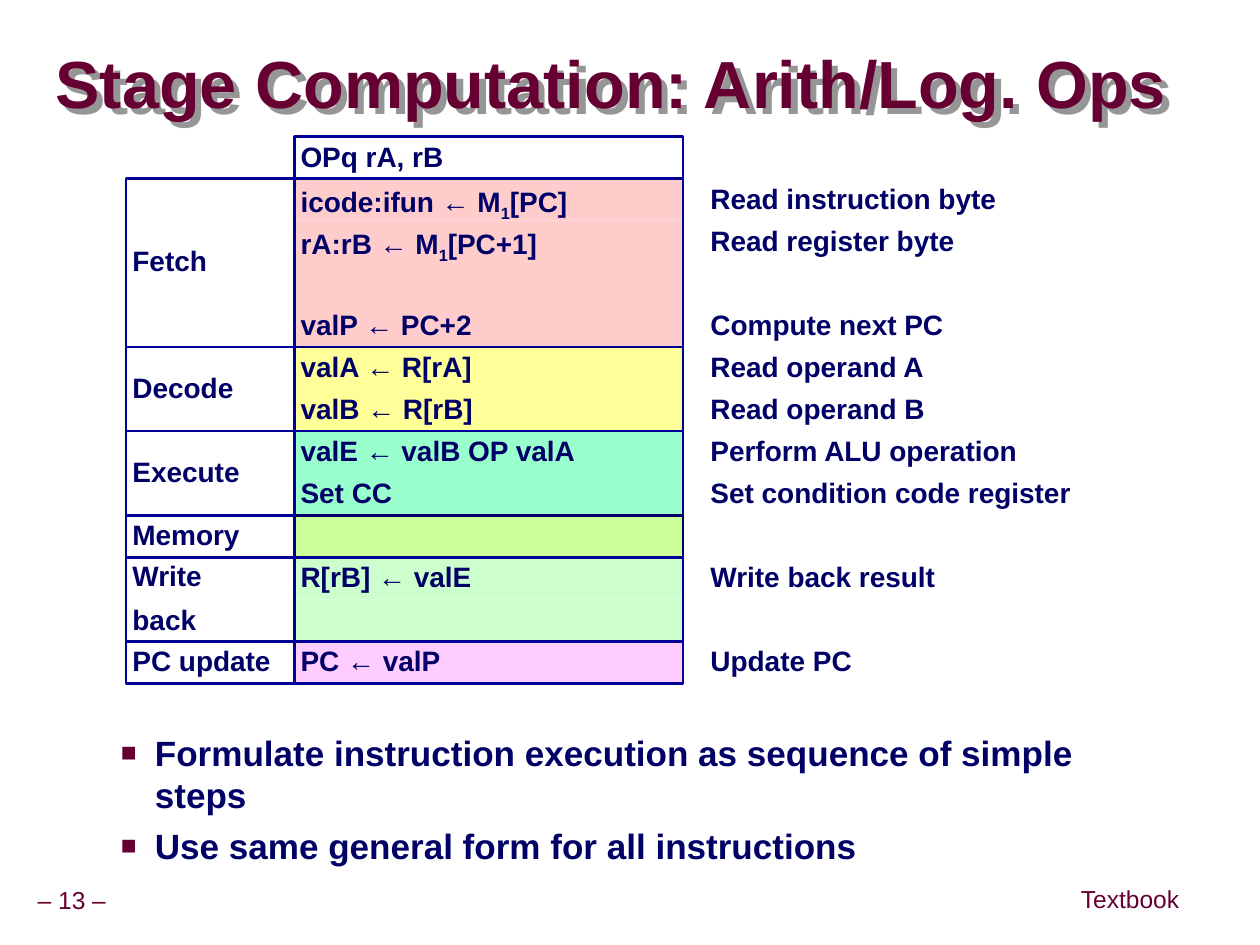
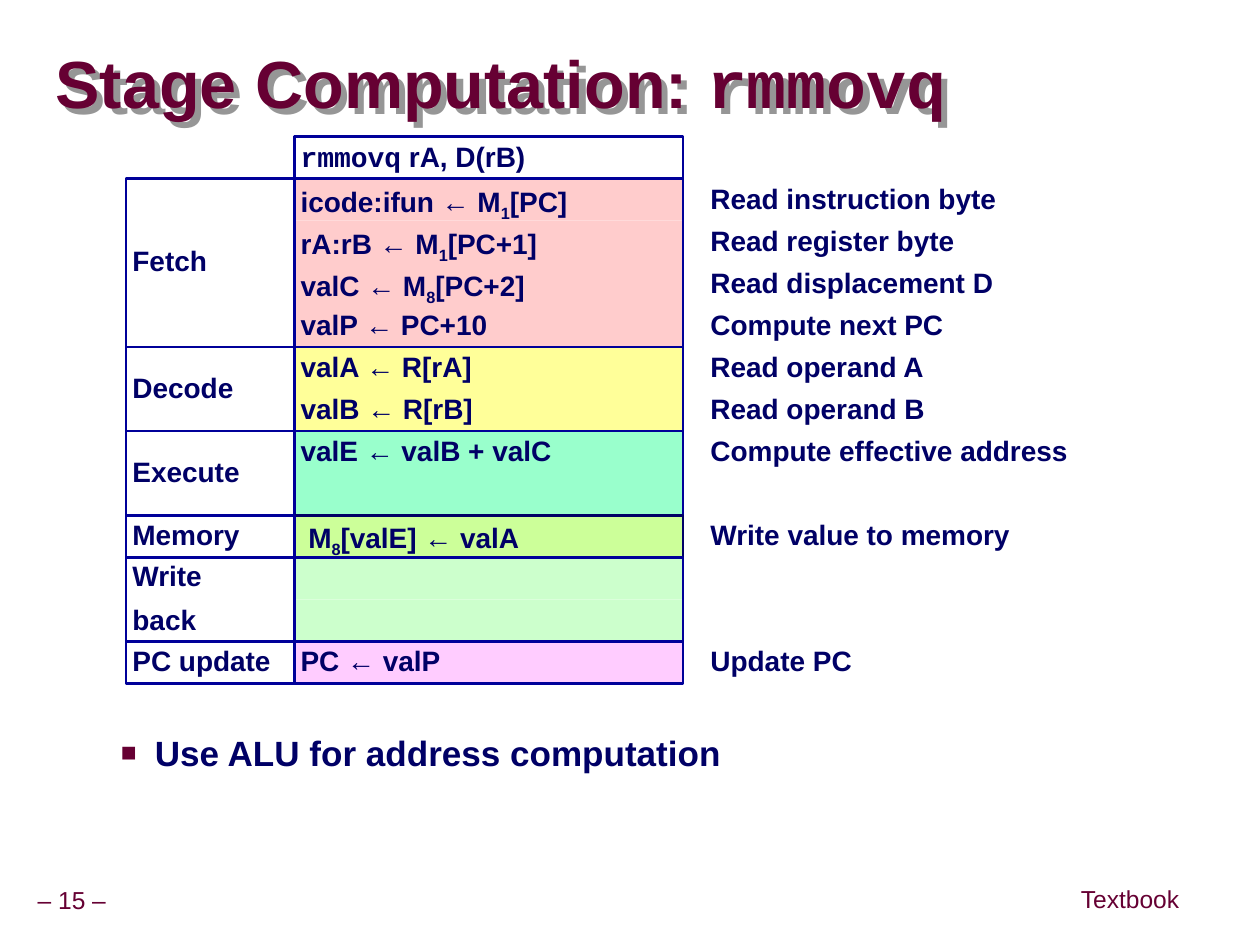
from dataclasses import dataclass

import lxml.etree
import pptx
import pptx.dml.color
import pptx.enum.shapes
import pptx.enum.text
import pptx.oxml.ns
import pptx.util

SANS, MONO = "Arial", "Courier New"
MAROON, NAVY, RULE, SHADOW = "660033", "000066", "000099", "969696"
COURSE = "Textbook"

# The stage chart sits on a grid of twelfths of an inch.
UNIT = 1 / 12
ROW, CHART_TOP = 4, 13
STAGE_LEFT, STAGE_WIDTH = 12, 16
STEP_LEFT, NOTE_LEFT, STEP_WIDTH = 28, 67, 37

TOP = pptx.enum.text.MSO_ANCHOR.TOP
MIDDLE = pptx.enum.text.MSO_ANCHOR.MIDDLE


@dataclass(frozen=True)
class Span:
    text: str
    font: str = SANS
    subscript: bool = False


@dataclass(frozen=True)
class Style:
    size: float
    color: str
    bold: bool = True
    leading: float = 0.9
    before: float = 0


@dataclass(frozen=True)
class Step:
    spans: tuple[Span, ...] = ()
    note: str = ""


@dataclass(frozen=True)
class Stage:
    name: str
    fill: str
    line: str = RULE


@dataclass(frozen=True)
class Content:
    number: int
    title: tuple[Span, ...]
    instruction: tuple[Span, ...]
    steps: tuple[tuple[Step, ...], ...]
    points: tuple[str, ...]


TITLE = Style(38, MAROON, leading=0.87)
CELL = Style(16, NAVY, before=8)
POINT = Style(20, NAVY, leading=1, before=5)
FOOTER = Style(14, MAROON, bold=False)

STAGES = (
    Stage("Fetch", "FFCCCC"),
    Stage("Decode", "FFFF99"),
    Stage("Execute", "99FFCC"),
    Stage("Memory", "CCFF99", NAVY),
    Stage("Write\nback", "CCFFCC"),
    Stage("PC update", "FFCCFF"),
)


def step(text: str, note: str = "") -> Step:
    return Step((Span(text),), note)


def memory_step(before: str, size: str, after: str, note: str) -> Step:
    """A step that reads or writes M with its byte count as a subscript."""
    return Step((Span(before + "M"), Span(size, subscript=True), Span(after)), note)


READ_CODE = memory_step("icode:ifun ← ", "1", "[PC]", "Read instruction byte")
READ_REGISTERS = memory_step("rA:rB ← ", "1", "[PC+1]", "Read register byte")
DECODE = (step("valA ← R[rA]", "Read operand A"), step("valB ← R[rB]", "Read operand B"))
UPDATE = (step("PC ← valP", "Update PC"),)
EMPTY = Step()

CONTENTS = (
    Content(
        13,
        (Span("Stage Computation: Arith/Log. Ops"),),
        (Span("OPq rA, rB"),),
        (
            (READ_CODE, READ_REGISTERS, EMPTY, step("valP ← PC+2", "Compute next PC")),
            DECODE,
            (step("valE ← valB OP valA", "Perform ALU operation"),
             step("Set CC", "Set condition code register")),
            (EMPTY,),
            (step("R[rB] ← valE", "Write back result"), EMPTY),
            UPDATE,
        ),
        ("Formulate instruction execution as sequence of simple steps",
         "Use same general form for all instructions"),
    ),
    Content(
        15,
        (Span("Stage Computation: "), Span("rmmovq", MONO)),
        (Span("rmmovq", MONO), Span(" rA, D(rB)")),
        (
            (READ_CODE, READ_REGISTERS,
             memory_step("valC ← ", "8", "[PC+2]", "Read displacement D"),
             step("valP ← PC+10", "Compute next PC")),
            DECODE,
            (step("valE ← valB + valC", "Compute effective address"), EMPTY),
            (memory_step(" ", "8", "[valE] ← valA", "Write value to memory"),),
            (EMPTY, EMPTY),
            UPDATE,
        ),
        ("Use ALU for address computation",),
    ),
)


def rgb(color: str) -> pptx.dml.color.RGBColor:
    return pptx.dml.color.RGBColor.from_string(color)


def inches(*lengths: float) -> list[int]:
    return [pptx.util.Inches(length) for length in lengths]


def add_xml(parent, tag: str, **attributes: str):
    return lxml.etree.SubElement(parent, pptx.oxml.ns.qn(tag), attributes)


def set_frame(frame, inset: float, anchor, wrap: bool = True) -> None:
    frame.auto_size = pptx.enum.text.MSO_AUTO_SIZE.NONE
    frame.margin_left = frame.margin_right = pptx.util.Inches(inset)
    frame.margin_top = frame.margin_bottom = pptx.util.Inches(inset)
    frame.vertical_anchor = anchor
    frame.word_wrap = wrap


def write(frame, lines, style: Style, align=pptx.enum.text.PP_ALIGN.LEFT) -> None:
    """Fill a text frame with one paragraph for each tuple of spans."""
    for index, spans in enumerate(lines):
        para = frame.add_paragraph() if index else frame.paragraphs[0]
        para.alignment = align
        para.line_spacing = style.leading
        para.space_before = pptx.util.Pt(style.before if index else 0)
        for span in spans:
            run = para.add_run()
            run.text = span.text
            run.font.name = span.font
            run.font.size = pptx.util.Pt(style.size)
            run.font.bold = style.bold
            run.font.color.rgb = rgb(style.color)
            if span.subscript:
                run.font._element.set("baseline", "-25000")


def add_cell(page, left: float, top: float, width: float, height: float,
             lines=(), fill: str = "", line: str = "", anchor=TOP) -> None:
    """Draw a box given in grid units; without fill and line it is plain text."""
    place = inches(*(UNIT * length for length in (left, top, width, height)))
    if fill or line:
        box = page.shapes.add_shape(pptx.enum.shapes.MSO_SHAPE.RECTANGLE, *place)
        box.shadow.inherit = False
        if fill:
            box.fill.solid()
            box.fill.fore_color.rgb = rgb(fill)
        else:
            box.fill.background()
        if line:
            box.line.color.rgb = rgb(line)
            box.line.width = pptx.util.Pt(1.5)
        else:
            box.line.fill.background()
    else:
        box = page.shapes.add_textbox(*place)
    set_frame(box.text_frame, 0.05, anchor)
    write(box.text_frame, lines, CELL)


def add_stage(page, stage: Stage, steps: tuple[Step, ...], top: float) -> None:
    height = ROW * len(steps)
    single = len(steps) == 1
    for index, item in enumerate(steps):
        row_top = top + ROW * index
        add_cell(page, STEP_LEFT, row_top, STEP_WIDTH, ROW,
                 [item.spans] if item.spans else [], stage.fill, stage.line if single else "")
        if item.note:
            add_cell(page, NOTE_LEFT, row_top, STEP_WIDTH, ROW, [(Span(item.note),)])
    if not single:
        add_cell(page, STEP_LEFT, top, STEP_WIDTH, height, line=stage.line)
    names = [(Span(word),) for word in stage.name.split("\n")]
    add_cell(page, STAGE_LEFT, top, STAGE_WIDTH, height, names, line=RULE, anchor=MIDDLE)


def add_chart_of_stages(page, content: Content) -> None:
    add_cell(page, STEP_LEFT, CHART_TOP, STEP_WIDTH, ROW, [content.instruction], line=RULE)
    top = CHART_TOP + ROW
    for stage, steps in zip(STAGES, content.steps):
        add_stage(page, stage, steps, top)
        top += ROW * len(steps)


def set_title(page, spans: tuple[Span, ...]) -> None:
    title = page.shapes.title
    title.left, title.top, title.width, title.height = inches(0.44, 0.27, 9.52, 0.85)
    set_frame(title.text_frame, 0, MIDDLE)
    write(title.text_frame, [spans], TITLE)
    effects = add_xml(title._element.spPr, "a:effectLst")
    shadow = add_xml(effects, "a:outerShdw", dist="63500", dir="2700000", algn="ctr")
    add_xml(shadow, "a:srgbClr", val=SHADOW)


def add_points(page, points: tuple[str, ...]) -> None:
    box = page.shapes.add_textbox(*inches(0.32, 5.75, 9.07, 1.28))
    set_frame(box.text_frame, 0.05, TOP)
    box.text_frame.margin_left = box.text_frame.margin_right = pptx.util.Inches(0.1)
    write(box.text_frame, [(Span(point),) for point in points], POINT)
    for para in box.text_frame.paragraphs:
        properties = para._element.get_or_add_pPr()
        properties.set("marL", str(pptx.util.Inches(0.81)))
        properties.set("indent", str(pptx.util.Inches(-0.27)))
        add_xml(add_xml(properties, "a:buClr"), "a:srgbClr", val=MAROON)
        add_xml(properties, "a:buSzPct", val="75000")
        add_xml(properties, "a:buFont", typeface=SANS)
        add_xml(properties, "a:buChar", char="■")


def add_footer(page, number: int) -> None:
    for text, place in ((f"– {number} –", (0.24, 6.99, 0.66, 0.31)),
                        (COURSE, (8.44, 6.98, 1.04, 0.32))):
        box = page.shapes.add_textbox(*inches(*place))
        set_frame(box.text_frame, 0.05, MIDDLE, wrap=False)
        write(box.text_frame, [(Span(text),)], FOOTER, pptx.enum.text.PP_ALIGN.CENTER)


def main() -> None:
    deck = pptx.Presentation()
    deck.slide_width, deck.slide_height = inches(9.99, 7.49)
    title_only = deck.slide_layouts[5]
    for content in CONTENTS:
        page = deck.slides.add_slide(title_only)
        set_title(page, content.title)
        add_chart_of_stages(page, content)
        add_points(page, content.points)
        add_footer(page, content.number)
    deck.save("out.pptx")


if __name__ == "__main__":
    main()
